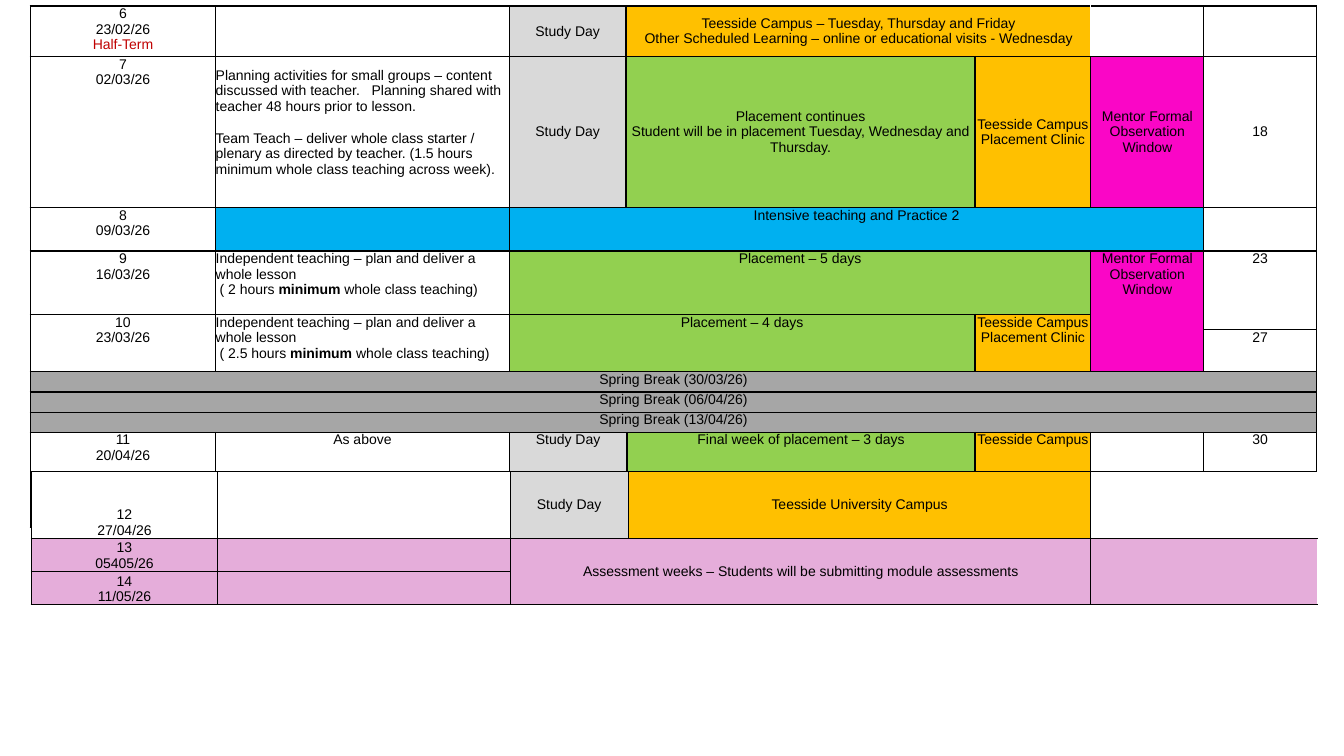
from lxml.etree import SubElement as Sub
from pptx import Presentation
from pptx.dml.color import RGBColor
from pptx.enum.text import MSO_ANCHOR as Anchor, PP_ALIGN as Align
from pptx.oxml.ns import qn
from pptx.util import Inches, Pt

WHITE, BLACK, RED = "FFFFFF", "000000", "C00000"
GREY, DARK, GOLD, GREEN = "D9D9D9", "A6A6A6", "FFC000", "92D050"
PINK, BLUE, LILAC = "FA06C6", "00B0F0", "E5ADDA"
STUDY = "Study Day"
CLINIC = "Teesside Campus\nPlacement Clinic"
MENTOR = "Mentor Formal Observation Window"


def color(code):
    return RGBColor.from_string(code)


def edge(cell, side, code):
    line = Sub(cell._tc.get_or_add_tcPr(), qn("a:ln" + side), w=str(Pt(1)))
    fill = Sub(line, qn("a:solidFill"))
    Sub(fill, qn("a:srgbClr"), val=code)


def write(cell, text, align):
    frame = cell.text_frame
    lines = text.split("\n")
    frame.text = "\n".join("" if "*" in line else line for line in lines)
    for para, line in zip(frame.paragraphs, lines):
        para.alignment = align
        if "*" in line:
            for i, part in enumerate(line.split("*")):
                run = para.add_run()
                run.text = part
                run.font.bold = i == 1
        for run in para.runs:
            font = run.font
            font.name, font.size = "Arial", Pt(10)
            font.color.rgb = color(RED if line == "Half-Term" else BLACK)
        if not para.runs:
            Sub(para._p, qn("a:endParaRPr"), sz="1000")


def grid(slide, left, top, cols, rows, parts, first, rest, pale=()):
    frame = slide.shapes.add_table(
        len(rows), len(cols), Inches(left), Inches(top),
        Inches(sum(cols)), Inches(sum(rows)))
    table = frame.table
    table.first_row = table.horz_banding = False
    for col, width in zip(table.columns, cols):
        col.width = Inches(width)
    for row, height in zip(table.rows, rows):
        row.height = Inches(height)
    known = {part[:2]: part[2:] for part in parts}
    for r in range(len(rows)):
        for c in range(len(cols)):
            cell = table.cell(r, c)
            text, fill, *span = known.get((r, c), ("", WHITE))
            cell.margin_left = cell.margin_right = 0
            cell.margin_top = cell.margin_bottom = 0
            cell.vertical_anchor = rest if c else first
            for side in "LRTB":
                edge(cell, side, WHITE if (r, c, side) in pale else BLACK)
            if fill:
                cell.fill.solid()
                cell.fill.fore_color.rgb = color(fill)
            else:
                cell.fill.background()
            left_set = c == 1 and len(text) > 20
            write(cell, text, Align.LEFT if left_set else Align.CENTER)
            if span:
                down, across = span
                cell.merge(table.cell(r + down - 1, c + across - 1))
    return table


def early(slide):
    parts = [
        (0, 0, "6\n23/02/26\nHalf-Term", WHITE),
        (0, 2, STUDY, GREY),
        (0, 3, "Teesside Campus – Tuesday, Thursday and Friday\n"
               "Other Scheduled Learning – online or educational visits - Wednesday",
         GOLD, 1, 2),
        (0, 6, "", None),
        (1, 0, "7\n02/03/26", WHITE),
        (1, 1, "Planning activities for small groups – content discussed with "
               "teacher.   Planning shared with teacher 48 hours prior to lesson.\n"
               "Team Teach – deliver whole class starter / plenary as directed by "
               "teacher. (1.5 hours minimum whole class teaching across week).", WHITE),
        (1, 2, STUDY, GREY),
        (1, 3, "Placement continues\nStudent will be in placement Tuesday, "
               "Wednesday and Thursday.", GREEN),
        (1, 4, CLINIC, GOLD),
        (1, 5, MENTOR, PINK),
        (1, 6, "18", None),
    ]
    pale = {(0, 3, "R"), (0, 4, "R"), (0, 5, "L")}
    table = grid(slide, 0.3, 0.06, [1.84, 2.91, 1.16, 3.46, 1.15, 1.12, 1.12],
                 [0.5, 1.5], parts, Anchor.TOP, Anchor.MIDDLE, pale)
    plan = table.cell(1, 1)
    plan.vertical_anchor = Anchor.BOTTOM
    plan.margin_bottom = Inches(0.3)
    plan.text_frame.paragraphs[1].space_before = Pt(11.5)


def middle(slide):
    solo = "Independent teaching – plan and deliver a whole lesson\n ( {} hours *minimum* whole class teaching)"
    parts = [
        (0, 0, "8\n09/03/26", WHITE),
        (0, 1, "", BLUE),
        (0, 2, "Intensive teaching and Practice 2", BLUE, 1, 4),
        (1, 0, "9\n16/03/26", WHITE),
        (1, 1, solo.format(2), WHITE),
        (1, 2, "Placement – 5 days", GREEN, 1, 3),
        (1, 5, MENTOR, PINK, 3, 1),
        (1, 6, "23", None, 2, 1),
        (2, 0, "10\n23/03/26", WHITE, 2, 1),
        (2, 1, solo.format(2.5), WHITE, 2, 1),
        (2, 2, "Placement – 4 days", GREEN, 2, 2),
        (2, 4, CLINIC, GOLD, 2, 1),
        (3, 6, "27", None),
        (7, 0, "11\n20/04/26", WHITE),
        (7, 1, "As above", WHITE),
        (7, 2, STUDY, GREY),
        (7, 3, "Final week of placement – 3 days", GREEN),
        (7, 4, "Teesside Campus", GOLD),
        (7, 6, "30", None),
    ]
    for i, day in enumerate(["30/03/26", "06/04/26", "13/04/26"]):
        parts.append((4 + i, 0, f"Spring Break ({day})", DARK, 1, 7))
    grid(slide, 0.3, 2.06, [1.84, 2.91, 1.17, 3.45, 1.15, 1.12, 1.12],
         [0.43, 0.63, 0.15, 0.42, 0.2, 0.2, 0.2, 0.94],
         parts, Anchor.TOP, Anchor.TOP)


def late(slide):
    parts = [
        (0, 0, "12\n27/04/26", WHITE),
        (0, 2, STUDY, GREY),
        (0, 3, "Teesside University Campus", GOLD),
        (1, 0, "13\n05405/26", LILAC),
        (1, 1, "", LILAC),
        (1, 2, "Assessment weeks – Students will be submitting module assessments",
         LILAC, 2, 2),
        (1, 4, "", LILAC, 2, 1),
        (2, 0, "14\n11/05/26", LILAC),
        (2, 1, "", LILAC),
    ]
    pale = {(r, 4, "R") for r in range(3)}
    grid(slide, 0.31, 4.68, [1.85, 2.9, 1.17, 4.59, 2.25], [0.66, 0.33, 0.33],
         parts, Anchor.BOTTOM, Anchor.MIDDLE, pale)


def main():
    deck = Presentation()
    deck.slide_width, deck.slide_height = Inches(13.33), Inches(7.5)
    slide = deck.slides.add_slide(deck.slide_layouts[6])
    early(slide)
    middle(slide)
    late(slide)
    deck.save("out.pptx")


if __name__ == "__main__":
    main()
